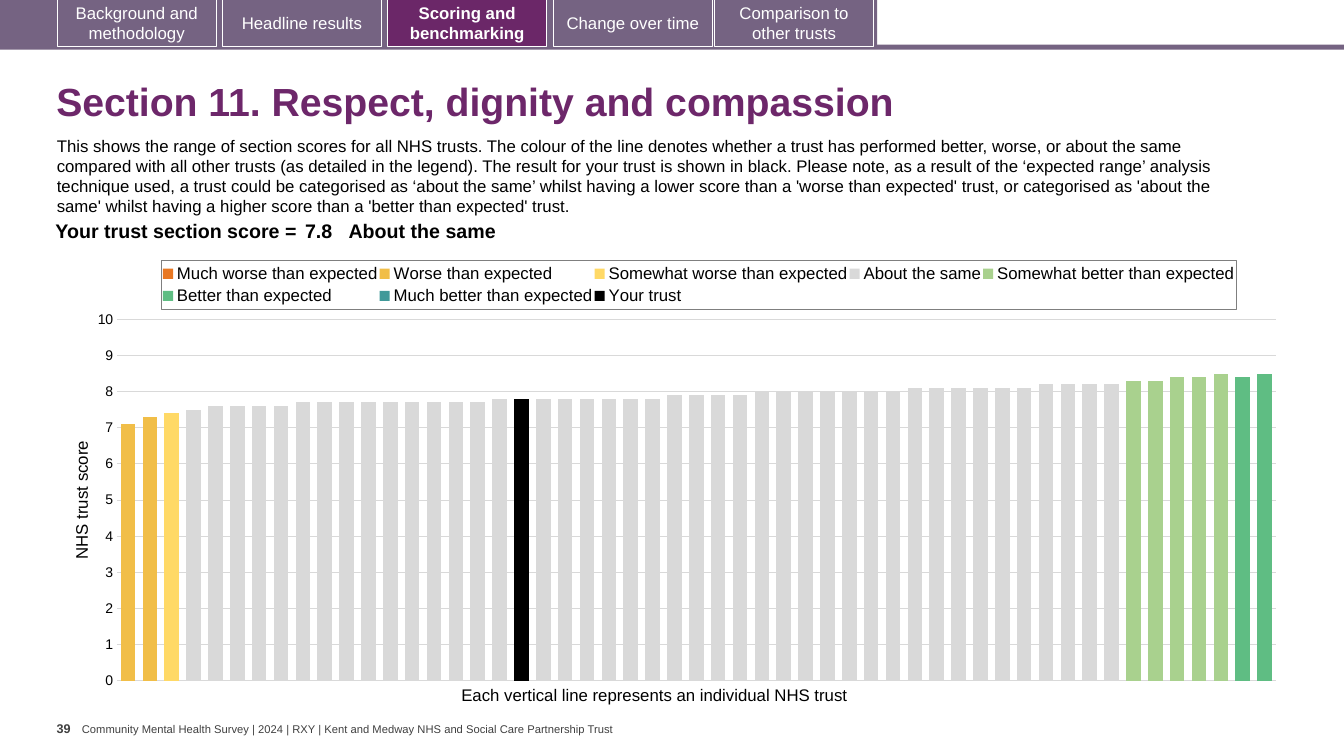
import copy

import pptx
import pptx.util
import pptx.chart.data
import pptx.dml.color
import pptx.enum.chart
import pptx.enum.shapes
import pptx.enum.text
import pptx.oxml
import pptx.oxml.ns

Pt = pptx.util.Pt
qn = pptx.oxml.ns.qn
ALIGN = pptx.enum.text.PP_ALIGN
ANCHOR = pptx.enum.text.MSO_ANCHOR

BAR, ACTIVE, TITLE = "756382", "6B2768", "6D276A"
WHITE, BLACK, GREY, GRID = "FFFFFF", "000000", "404040", "D9D9D9"

TABS = [
    ("Background and methodology", 41),
    ("Headline results", 159),
    ("Scoring and benchmarking", 277),
    ("Change over time", 395.3),
    ("Comparison to other trusts", 510.5),
]
ACTIVE_TAB = "Scoring and benchmarking"
INTRODUCTION = (
    "This shows the range of section scores for all NHS trusts. The colour of the line denotes "
    "whether a trust has performed better, worse, or about the same compared with all other trusts "
    "(as detailed in the legend). The result for your trust is shown in black. Please note, as a "
    "result of the ‘expected range’ analysis technique used, a trust could be categorised as ‘about "
    "the same’ whilst having a lower score than a 'worse than expected' trust, or categorised as "
    "'about the same' whilst having a higher score than a 'better than expected' trust."
)
TRUST_COUNT = 53
ABOUT_THE_SAME = ([7.5] + [7.6] * 4 + [7.7] * 9 + [7.8] * 8 + [7.9] * 4
                  + [8] * 7 + [8.1] * 6 + [8.2] * 4)
# name, colour, position of the first trust in the band, scores
BANDS = [
    ("Much worse than expected", "E87722", 0, []),
    ("Worse than expected", "F1BE48", 0, [7.1, 7.3]),
    ("Somewhat worse than expected", "FFD966", 2, [7.4]),
    ("About the same", "D9D9D9", 3, ABOUT_THE_SAME),
    ("Somewhat better than expected", "A9D18E", 46, [8.3, 8.3, 8.4, 8.4, 8.5]),
    ("Better than expected", "5FBD83", 51, [8.4, 8.5]),
    ("Much better than expected", "419999", 0, []),
    ("Your trust", BLACK, 18, [7.8]),
]


def rgb(value):
    return pptx.dml.color.RGBColor.from_string(value)


def apply(target, values):
    for name, value in values.items():
        setattr(target, name, value)


def style_font(font, size, color=BLACK, bold=False):
    apply(font, {"name": "Arial", "size": Pt(size), "bold": bold})
    font.color.rgb = rgb(color)


def write(frame, text, size, color=BLACK, bold=False, align=ALIGN.LEFT, spacing=None):
    paragraph = frame.paragraphs[0]
    apply(paragraph, {"text": text, "alignment": align, "line_spacing": spacing})
    style_font(paragraph.runs[0].font, size, color, bold)


def add_text(slide, box, text, size, color=BLACK, bold=False, spacing=None, **frame_format):
    frame = slide.shapes.add_textbox(*map(Pt, box)).text_frame
    apply(frame, {"word_wrap": True, **frame_format})
    write(frame, text, size, color, bold, spacing=spacing)


def add_rectangle(slide, box, fill, line=None):
    shape = slide.shapes.add_shape(pptx.enum.shapes.MSO_SHAPE.RECTANGLE, *map(Pt, box))
    shape.shadow.inherit = False
    shape.fill.solid()
    shape.fill.fore_color.rgb = rgb(fill)
    if line:
        shape.line.color.rgb = rgb(line)
        shape.line.width = Pt(0.75)
    else:
        shape.line.fill.background()
    return shape


def add_navigation(slide, box):
    left, top, width, height = box
    add_rectangle(slide, (left, top + height - 3.6, width, 3.6), BAR)
    add_rectangle(slide, (left, top, 626.5, height - 1.5), BAR)
    for label, offset in TABS:
        active = label == ACTIVE_TAB
        tab = add_rectangle(slide, (left + offset, top - 0.7, 113.5, height - 1.5),
                            ACTIVE if active else BAR, WHITE)
        apply(tab.text_frame, {"word_wrap": True, "vertical_anchor": ANCHOR.MIDDLE})
        write(tab.text_frame, label, 12, WHITE, active, ALIGN.CENTER)


def add_heading(slide, box):
    left, top, width, height = box
    add_text(slide, (left, top, width, 52), "Section 11. Respect, dignity and compassion",
             28, TITLE, True, 0.9, vertical_anchor=ANCHOR.MIDDLE)
    add_text(slide, (left + 0.4, top + 45, width - 26, height - 45), INTRODUCTION, 12)


def add_score(slide, box):
    """Place the one-row table with the trust's own result."""
    table = slide.shapes.add_table(1, 3, *map(Pt, box)).table
    apply(table, {"first_row": False, "horz_banding": False})
    cells = [
        ("Your trust section score =", 189.5, 2.9, ALIGN.RIGHT),
        ("7.8", 34, 2.9, ALIGN.LEFT),
        ("About the same", box[2] - 223.5, 0, ALIGN.LEFT),
    ]
    for index, (text, width, side, align) in enumerate(cells):
        table.columns[index].width = Pt(width)
        cell = table.cell(0, index)
        cell.fill.background()
        apply(cell, {"margin_left": Pt(side), "margin_right": Pt(side),
                     "margin_top": Pt(2.9), "margin_bottom": Pt(2.9)})
        write(cell.text_frame, text, 14, bold=True, align=align)


def set_layout(parent, position, x, y, width, height, target=""):
    """Give a chart part a fixed place, in fractions of the chart."""
    for old in parent.findall(qn("c:layout")):
        parent.remove(old)
    parent.insert(position, pptx.oxml.parse_xml(
        f'<c:layout {pptx.oxml.ns.nsdecls("c")}><c:manualLayout>{target}'
        '<c:xMode val="edge"/><c:yMode val="edge"/>'
        f'<c:x val="{x}"/><c:y val="{y}"/><c:w val="{width}"/><c:h val="{height}"/>'
        '</c:manualLayout></c:layout>'))


def style_legend(chart):
    chart.has_legend = True
    legend = chart.legend
    apply(legend, {"position": pptx.enum.chart.XL_LEGEND_POSITION.TOP,
                   "include_in_layout": False})
    style_font(legend.font, 12)
    element = legend._element
    set_layout(element, 1, 0.076, 0.027, 0.878, 0.108)
    border = pptx.oxml.parse_xml(
        f'<c:spPr {pptx.oxml.ns.nsdecls("c", "a")}><a:ln w="9525"><a:solidFill>'
        '<a:srgbClr val="7F7F7F"/></a:solidFill></a:ln></c:spPr>')
    element.find(qn("c:txPr")).addprevious(border)


def style_axes(chart):
    chart.category_axis.visible = False
    axis = chart.value_axis
    no_tick = pptx.enum.chart.XL_TICK_MARK.NONE
    apply(axis, {"minimum_scale": 0, "maximum_scale": 10, "major_unit": 1,
                 "major_tick_mark": no_tick, "minor_tick_mark": no_tick})
    apply(axis.tick_labels, {"number_format": "0", "number_format_is_linked": False})
    style_font(axis.tick_labels.font, 10)
    axis.format.line.fill.background()
    axis.major_gridlines.format.line.color.rgb = rgb(GRID)
    axis.major_gridlines.format.line.width = Pt(0.75)
    write(axis.axis_title.text_frame, "NHS trust score", 12, align=ALIGN.CENTER)


def move_last_series_to_right_axis(plot_area):
    bars = plot_area.find(qn("c:barChart"))
    right_bars = copy.deepcopy(bars)
    bars.remove(bars.findall(qn("c:ser"))[-1])
    for series in right_bars.findall(qn("c:ser"))[:-1]:
        right_bars.remove(series)
    bars.addnext(right_bars)
    category, value = plot_area.find(qn("c:catAx")), plot_area.find(qn("c:valAx"))
    right_category, right_value = copy.deepcopy(category), copy.deepcopy(value)
    value.addnext(right_value)
    right_value.addnext(right_category)
    for tag in ("c:majorGridlines", "c:title"):
        right_value.remove(right_value.find(qn(tag)))
    for tag, setting in (("c:axPos", "r"), ("c:tickLblPos", "none"),
                         ("c:majorTickMark", "out"), ("c:crosses", "max")):
        right_value.find(qn(tag)).set("val", setting)
    names = {category.find(qn("c:axId")).get("val"): "5001",
             value.find(qn("c:axId")).get("val"): "5002"}
    for part in (right_bars, right_category, right_value):
        for reference in part.findall(qn("c:axId")) + part.findall(qn("c:crossAx")):
            reference.set("val", names[reference.get("val")])


def add_score_chart(slide, box):
    left, top, width, height = box
    data = pptx.chart.data.CategoryChartData()
    data.categories = [str(number + 1) for number in range(TRUST_COUNT)]
    for name, _, start, scores in BANDS:
        after = TRUST_COUNT - start - len(scores)
        data.add_series(name, [None] * start + scores + [None] * after)
    chart = slide.shapes.add_chart(pptx.enum.chart.XL_CHART_TYPE.COLUMN_CLUSTERED,
                                   *map(Pt, box), data).chart
    chart.has_title = False
    style_font(chart.font, 10)
    plot = chart.plots[0]
    apply(plot, {"gap_width": 50, "overlap": 100, "vary_by_categories": False})
    for series, (_, color, _, _) in zip(plot.series, BANDS):
        series.format.fill.solid()
        series.format.fill.fore_color.rgb = rgb(color)
    style_axes(chart)
    style_legend(chart)
    plot_area = chart._chartSpace.chart.plotArea
    set_layout(plot_area, 0, 0.04, 0.158, 0.946, 0.808, '<c:layoutTarget val="inner"/>')
    move_last_series_to_right_axis(plot_area)
    add_text(slide, (left + 273.8, top + height - 11.5, 296, 21.8),
             "Each vertical line represents an individual NHS trust", 12, word_wrap=False)


def add_footer(slide, box):
    left, top, width, height = box
    sides = {"word_wrap": False, "margin_left": 0, "margin_right": 0}
    add_text(slide, (left, top, 18, height), "39", 9, GREY, True, **sides)
    add_text(slide, (left + 18, top + 4.6, width - 18, 9.5),
             "Community Mental Health Survey | 2024 | RXY | "
             "Kent and Medway NHS and Social Care Partnership Trust",
             8, GREY, margin_top=0, margin_bottom=0, vertical_anchor=ANCHOR.MIDDLE, **sides)


def main():
    presentation = pptx.Presentation()
    apply(presentation, {"slide_width": Pt(960), "slide_height": Pt(540)})
    slide = presentation.slides.add_slide(presentation.slide_layouts[6])
    add_navigation(slide, (0, 0, 960, 35.5))
    add_heading(slide, (33.1, 48.4, 899.3, 110.2))
    add_score_chart(slide, (48.6, 177.6, 874.8, 319.7))
    add_score(slide, (25.5, 154.8, 842, 22.3))
    add_footer(slide, (40.5, 511.4, 402.5, 28.8))
    presentation.save("out.pptx")


if __name__ == "__main__":
    main()
